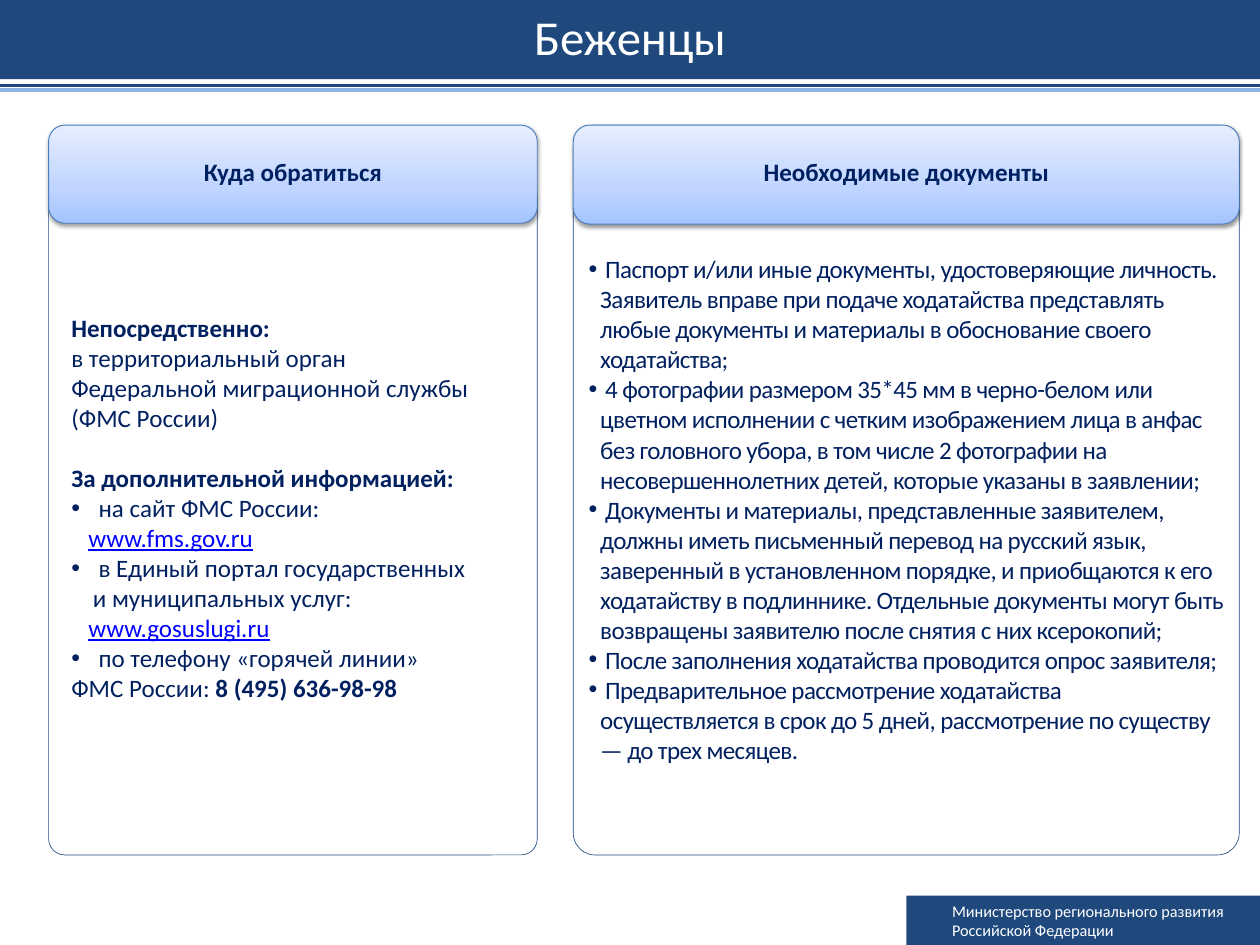
from dataclasses import dataclass

from lxml import etree
from pptx import Presentation
from pptx.dml.color import RGBColor
from pptx.enum import shapes, text
from pptx.oxml.ns import qn
from pptx.util import Inches, Pt

COLORS = {
    "navy": "1F497D", "sky": "8EB4E3", "ink": "002060", "link": "0000FF",
    "white": "FFFFFF", "edge": "4B7EBC", "shadow": "000000",
}
HEADER_STOPS = {0: "A4C4FF", 35: "BFD4FF", 100: "E6EEFF"}
RECT = shapes.MSO_SHAPE.RECTANGLE
ROUNDED = shapes.MSO_SHAPE.ROUNDED_RECTANGLE


@dataclass
class Line:
    """One paragraph: a plain or bold lead, then an optional bold or link tail."""
    lead: str = ""
    bold: bool = False
    tail: str = ""
    link: str = ""
    bullet: bool = False
    left: float = 0
    before: float = 0


@dataclass
class Card:
    title: str
    left: float
    width: float
    frame_top: float
    header_height: float
    insets: tuple[float, float, float, float]
    hang: float
    spacing: float
    lines: list[Line]


CARD_TOP, CARD_BOTTOM = 1.39, 9.5
CARDS = [
    Card("Необходимые документы", 6.37, 7.4, CARD_TOP, 1.1, (0.1, 1.36, 0.1, 0), 0.13, -0.5, [
        Line(" Паспорт и/или иные документы, удостоверяющие личность. Заявитель вправе при подаче "
             "ходатайства представлять любые документы и материалы в обоснование своего "
             "ходатайства;", bullet=True),
        Line(" 4 фотографии размером 35*45 мм в черно-белом или цветном исполнении с четким "
             "изображением лица в анфас без головного убора, в том числе 2 фотографии на "
             "несовершеннолетних детей, которые указаны в заявлении;", bullet=True),
        Line(" Документы и материалы, представленные заявителем, должны иметь письменный перевод "
             "на русский язык, заверенный в установленном порядке, и приобщаются к его "
             "ходатайству в подлиннике. Отдельные документы могут быть возвращены заявителю "
             "после снятия с них ксерокопий;", bullet=True),
        Line(" После заполнения ходатайства проводится опрос заявителя;", bullet=True),
        Line(" Предварительное рассмотрение ходатайства осуществляется в срок до 5 дней, "
             "рассмотрение по существу — до трех месяцев.", bullet=True),
    ]),
    Card("Куда обратиться", 0.54, 5.43, 2, 1.09, (0.2, 1.42, 0.1, 0), 0.24, 0, [
        Line("Непосредственно:", bold=True),
        Line("в территориальный орган"),
        Line("Федеральной миграционной службы (ФМС России)"),
        Line("За дополнительной информацией:", bold=True, before=24),
        Line(" на сайт ФМС России:", bullet=True),
        Line(link="www.fms.gov.ru", left=0.19),
        Line(" в Единый портал государственных\vи муниципальных услуг:", bullet=True),
        Line(link="www.gosuslugi.ru", left=0.19),
        Line(" по телефону «горячей линии»", bullet=True),
        Line("ФМС России: ", tail="8 (495) 636-98-98"),
    ]),
]


def rgb(name: str) -> RGBColor:
    return RGBColor.from_string(COLORS[name])


def add_box(slide, kind, left, top, width, height, *, fill=None, line=None, weight=0.5,
            radius=None, insets=(0.1, 0.05, 0.1, 0.05), anchor=text.MSO_ANCHOR.MIDDLE):
    box = slide.shapes.add_shape(kind, Inches(left), Inches(top), Inches(width), Inches(height))
    box.shadow.inherit = False
    if radius is not None:
        box.adjustments[0] = radius
    if fill:
        box.fill.solid()
        box.fill.fore_color.rgb = rgb(fill)
    else:
        box.fill.background()
    if line:
        box.line.color.rgb = rgb(line)
        box.line.width = Pt(weight)
    else:
        box.line.fill.background()
    frame = box.text_frame
    frame.word_wrap = True
    frame.vertical_anchor = anchor
    frame.margin_left, frame.margin_top, frame.margin_right, frame.margin_bottom = map(Inches, insets)
    return box


def write(paragraph, words: str, *, size=20, color="ink", bold=False, underline=False,
          spacing=0, align=text.PP_ALIGN.LEFT, leading=None) -> None:
    paragraph.alignment = align
    if leading:
        paragraph.line_spacing = Pt(leading)
    # Split at line breaks so that every piece is formatted
    for number, piece in enumerate(words.split("\v")):
        if number:
            paragraph.add_line_break()
        run = paragraph.add_run()
        run.text = piece
        run.font.name = "Calibri"
        run.font.size = Pt(size)
        run.font.bold = bold
        run.font.underline = underline
        run.font.color.rgb = rgb(color)
        if spacing:
            run.font._element.set("spc", str(int(spacing * 100)))


def indent(paragraph, left: float, hang: float = 0, bullet: bool = False) -> None:
    props = paragraph._p.get_or_add_pPr()
    props.set("marL", str(Inches(left)))
    props.set("indent", str(-Inches(hang)))
    if bullet:
        etree.SubElement(props, qn("a:buFont"), typeface="Arial")
        etree.SubElement(props, qn("a:buChar"), char="•")


def add_color(parent, hex_value: str):
    return etree.SubElement(parent, qn("a:srgbClr"), val=hex_value)


def style_header(box) -> None:
    """Three-stop vertical gradient and a soft shadow below."""
    box.fill.gradient()
    box.fill.gradient_angle = 90
    props = box._element.spPr
    stops = props.find(qn("a:gradFill")).find(qn("a:gsLst"))
    for stop in list(stops):
        stops.remove(stop)
    for position, hex_value in HEADER_STOPS.items():
        add_color(etree.SubElement(stops, qn("a:gs"), pos=str(position * 1000)), hex_value)
    shadow = etree.SubElement(props.find(qn("a:effectLst")), qn("a:outerShdw"),
                              blurRad=str(Pt(3.1)), dist=str(Pt(1.6)), dir="5400000", rotWithShape="0")
    etree.SubElement(add_color(shadow, COLORS["shadow"]), qn("a:alpha"), val="38000")


def add_rule(slide, left: float, right: float, y: float, color: str) -> None:
    rule = slide.shapes.add_connector(shapes.MSO_CONNECTOR.STRAIGHT,
                                      Inches(left), Inches(y), Inches(right), Inches(y))
    rule.line.color.rgb = rgb(color)
    rule.line.width = Pt(3)
    etree.SubElement(rule._element.spPr, qn("a:effectLst"))


def add_card(slide, card: Card) -> None:
    body = add_box(slide, ROUNDED, card.left, card.frame_top, card.width, CARD_BOTTOM - card.frame_top,
                   line="navy", radius=0.033, insets=card.insets, anchor=text.MSO_ANCHOR.TOP)
    for number, line in enumerate(card.lines):
        paragraph = body.text_frame.add_paragraph() if number else body.text_frame.paragraphs[0]
        if line.bullet:
            indent(paragraph, card.hang, card.hang, bullet=True)
        else:
            indent(paragraph, line.left)
        if line.before:
            paragraph.space_before = Pt(line.before)
        if line.lead:
            write(paragraph, line.lead, bold=line.bold, spacing=card.spacing)
        if line.tail:
            write(paragraph, line.tail, bold=True)
        if line.link:
            write(paragraph, line.link, color="link", underline=True)
    header = add_box(slide, ROUNDED, card.left, CARD_TOP, card.width, card.header_height,
                     line="edge", weight=0.75, insets=(0, 0.05, 0, 0.05))
    style_header(header)
    write(header.text_frame.paragraphs[0], card.title, bold=True,
          align=text.PP_ALIGN.CENTER, leading=19.6)


def main() -> None:
    deck = Presentation()
    deck.slide_width, deck.slide_height = Inches(14), Inches(10.5)
    slide = deck.slides.add_slide(deck.slide_layouts[6])

    # Ministry label
    ministry = add_box(slide, RECT, 10.07, 9.95, 3.94, 0.55, fill="navy").text_frame.paragraphs[0]
    indent(ministry, 0.41)
    write(ministry, "Министерство регионального развития\vРоссийской Федерации", size=13, color="white")

    # Title band and its rules
    add_rule(slide, 0, 14, 0.95, "navy")
    add_rule(slide, -0.04, 14.01, 1, "sky")
    band = add_box(slide, ROUNDED, 0, 0, 14, 0.88, fill="navy", radius=0, insets=(0.14, 0.07, 0.14, 0.07))
    write(band.text_frame.paragraphs[0], "Беженцы", size=39, color="white",
          align=text.PP_ALIGN.CENTER, leading=40.6)

    # Content cards
    for card in CARDS:
        add_card(slide, card)
    deck.save("out.pptx")


if __name__ == "__main__":
    main()
